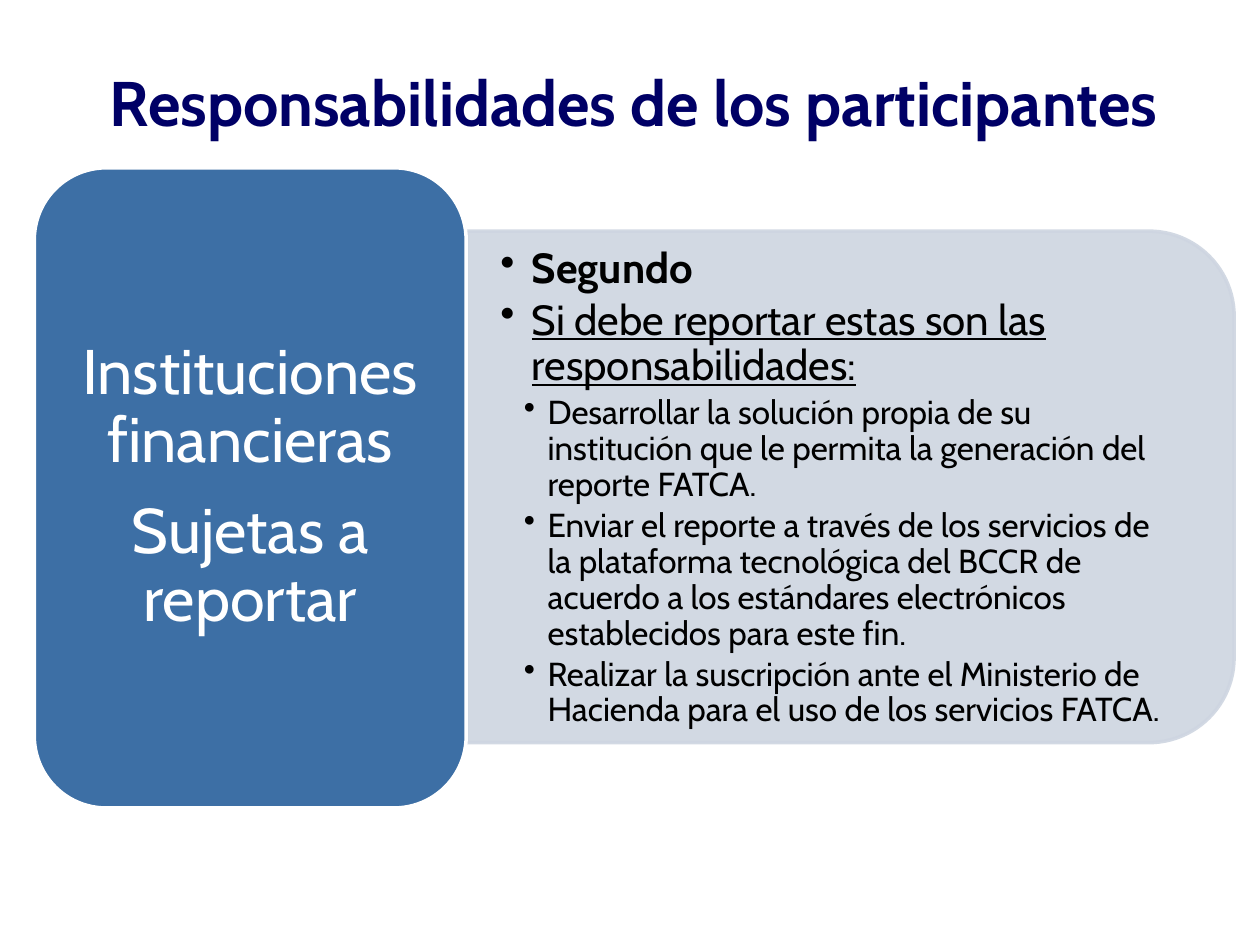
import pptx
import pptx.util
import pptx.dml.color
import pptx.enum.shapes
import pptx.enum.text
import pptx.oxml
import pptx.oxml.ns
import lxml.etree

Pt = pptx.util.Pt
Shape = pptx.enum.shapes.MSO_SHAPE
Align = pptx.enum.text.PP_ALIGN
Anchor = pptx.enum.text.MSO_ANCHOR
qn = pptx.oxml.ns.qn

HUES = {
    "title": "000066",
    "card": "3D6FA5",
    "panel": "CED5E1",
    "white": "FFFFFF",
    "black": "000000",
}


class Deck:
    """Holds the style and the current slide."""

    def __init__(self, show, font):
        self.font = font
        self.slide = show.slides.add_slide(show.slide_layouts[6])

    def hue(self, name):
        return pptx.dml.color.RGBColor.from_string(HUES[name])

    def shape(self, kind, box, fill, line, turn=0, alpha=None):
        shape = self.slide.shapes.add_shape(kind, *map(Pt, box))
        shape.shadow.inherit = False
        shape.rotation = turn
        shape.fill.solid()
        shape.fill.fore_color.rgb = self.hue(fill)
        shape.line.color.rgb = self.hue(line)
        shape.line.width = Pt(2)
        if alpha:
            for tint in shape.element.spPr.iter(qn("a:srgbClr")):
                lxml.etree.SubElement(tint, qn("a:alpha"), val=str(alpha * 1000))
        return shape

    def text(self, box, pad, anchor=Anchor.MIDDLE):
        frame = self.slide.shapes.add_textbox(*map(Pt, box)).text_frame
        frame.word_wrap = True
        frame.vertical_anchor = anchor
        frame.margin_left = frame.margin_right = Pt(pad[0])
        frame.margin_top = frame.margin_bottom = Pt(pad[1])
        return frame

    def para(self, frame, text, size, color, after=0, space=1.0,
             bold=False, under=False, level=0, indent=None):
        first = frame.paragraphs[0]
        para = frame.add_paragraph() if first.runs else first
        para.text = text
        para.level = level
        if indent:
            props = para._p.get_or_add_pPr()
            props.set("marL", str(Pt(indent[0])))
            props.set("indent", str(-Pt(indent[1])))
            lxml.etree.SubElement(props, qn("a:buChar"), char="•")
        else:
            para.alignment = Align.CENTER
        para.line_spacing = space
        para.space_after = Pt(after)
        font = para.runs[0].font
        font.name = self.font
        font.size = Pt(size)
        font.bold = bold
        font.underline = under
        font.color.rgb = self.hue(color)


def main():
    show = pptx.Presentation()
    show.slide_width, show.slide_height = Pt(720), Pt(540)
    deck = Deck(show, "Cabin")

    deck.shape(Shape.ROUND_2_SAME_RECTANGLE, (339.8, 59, 292.3, 438.5),
               "panel", "panel", turn=90, alpha=90)
    duties = deck.text((266.4, 146.9, 424.1, 264.2), (19.5, 9.8))
    heads = [("Segundo", True, False),
             ("Si debe reportar estas son las responsabilidades:", False, True)]
    for text, bold, under in heads:
        deck.para(duties, text, 24, "black", 3.6, 0.9, bold, under,
                  level=1, indent=(18, 18))
    tasks = [
        "Desarrollar la solución propia de su institución que le permita "
        "la generación del reporte FATCA.",
        "Enviar el reporte a través de los servicios de la plataforma "
        "tecnológica del BCCR de acuerdo a los estándares electrónicos "
        "establecidos para este fin.",
        "Realizar la suscripción ante el Ministerio de Hacienda para el uso "
        "de los servicios FATCA.",
    ]
    for text in tasks:
        deck.para(duties, text, 19, "black", 2.85, 0.9,
                  level=2, indent=(27, 13.5))

    deck.shape(Shape.ROUNDED_RECTANGLE, (19.6, 95.9, 246.8, 365.8),
               "card", "white")
    group = deck.text((31.7, 108, 222.5, 341.3), (10.8, 5.4))
    for text in ("Instituciones financieras", "Sujetas a reportar"):
        deck.para(group, text, 36, "white", 12.6, 0.9)

    title = deck.text((55.4, 31.7, 613.4, 51.1), (7.2, 3.6), Anchor.BOTTOM)
    deck.para(title, "Responsabilidades de los participantes", 36, "title",
              bold=True)

    show.save("out.pptx")


if __name__ == "__main__":
    main()
